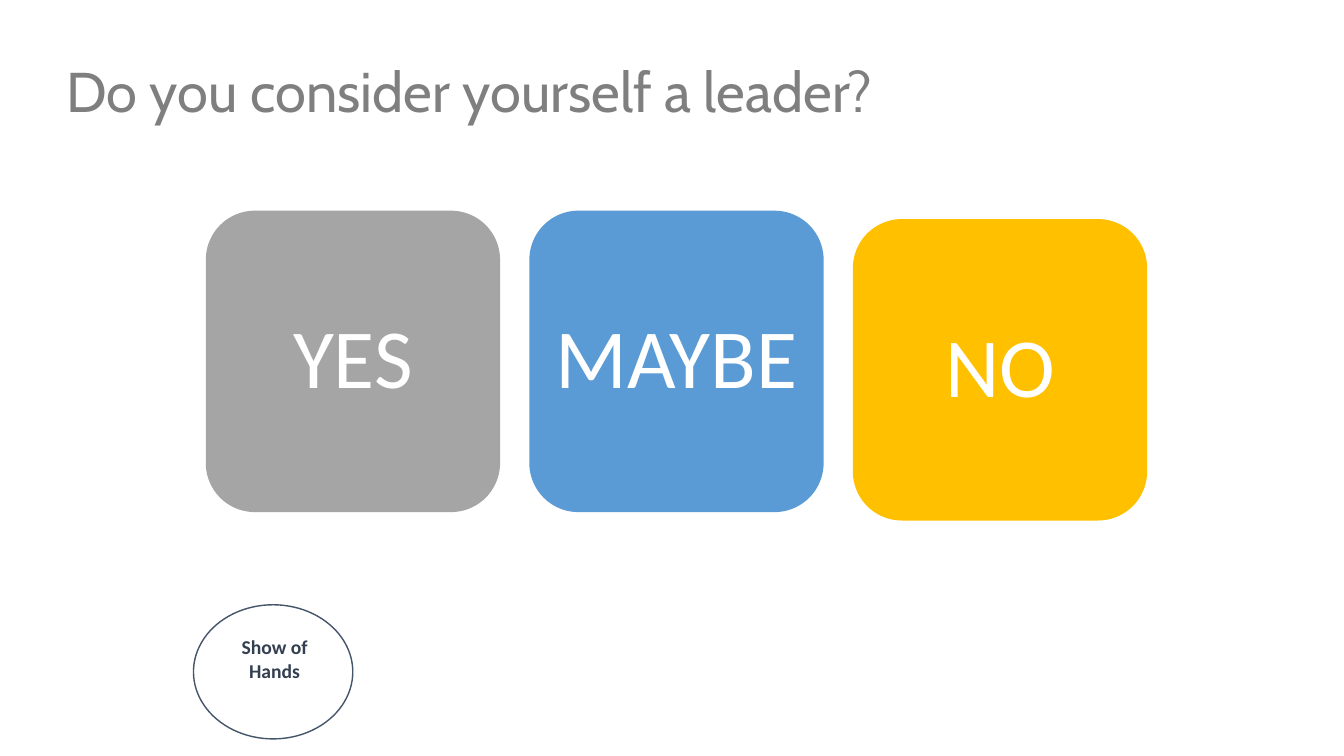
from pptx import Presentation
from pptx.dml.color import RGBColor
from pptx.enum import shapes as kinds, text as txt
from pptx.util import Pt

HUES = {"title": "7F7F7F", "navy": "333F50", "edge": "44546A", "white": "FFFFFF",
        "gray": "A5A5A5", "blue": "5B9BD5", "gold": "FFC000"}


def hue(name):
    """Return the named colour."""
    return RGBColor.from_string(HUES[name])


def write(shape, words, size, color, font="Calibri", bold=False, inset=None,
          align=txt.PP_ALIGN.CENTER, anchor=txt.MSO_ANCHOR.TOP, line=None):
    """Set the text of a shape and its format."""
    frame = shape.text_frame
    frame.word_wrap = True
    frame.vertical_anchor = anchor
    if inset is not None:
        frame.margin_left = frame.margin_right = Pt(inset)
        frame.margin_top = frame.margin_bottom = Pt(inset)
    para = frame.paragraphs[0]
    para.alignment = align
    para.line_spacing = line
    run = para.add_run()
    run.text = words
    run.font.name = font
    run.font.size = Pt(size)
    run.font.bold = bold
    run.font.color.rgb = hue(color)


def label(slide, box, words, **style):
    """Add a text box."""
    shape = slide.shapes.add_textbox(*map(Pt, box))
    write(shape, words, **style)


def draw(slide, kind, box, fill=None, edge=None):
    """Add a flat shape with an optional fill and outline."""
    shape = slide.shapes.add_shape(kind, *map(Pt, box))
    shape.shadow.inherit = False
    if fill:
        shape.fill.solid()
        shape.fill.fore_color.rgb = hue(fill)
    else:
        shape.fill.background()
    if edge:
        shape.line.color.rgb = hue(edge)
        shape.line.width = Pt(1)
    else:
        shape.line.fill.background()
    return shape


def main():
    """Build the slide and save it."""
    deck = Presentation()
    deck.slide_width, deck.slide_height = Pt(960), Pt(540)
    slide = deck.slides.add_slide(deck.slide_layouts[6])

    label(slide, (40.3, 42.5, 875, 72.7), "Do you consider yourself a leader?",
          size=40, color="title", font="Cabin", align=txt.PP_ALIGN.LEFT, line=0.9)
    draw(slide, kinds.MSO_SHAPE.OVAL, (138.2, 432, 113.8, 95.8), edge="edge")
    label(slide, (156.2, 450, 80, 46), "Show of Hands",
          size=14, color="navy", bold=True)

    tiles = [("YES", "gray", 150.5), ("MAYBE", "blue", 150.5), ("NO", "gold", 156.5)]
    for i, (words, fill, top) in enumerate(tiles):
        tile = draw(slide, kinds.MSO_SHAPE.ROUNDED_RECTANGLE,
                    (147 + i * 231.1, top, 210.2, 215.3), fill=fill)
        write(tile, words, size=60, color="white", inset=6,
              anchor=txt.MSO_ANCHOR.MIDDLE, line=0.9)
    deck.save("out.pptx")


if __name__ == "__main__":
    main()
